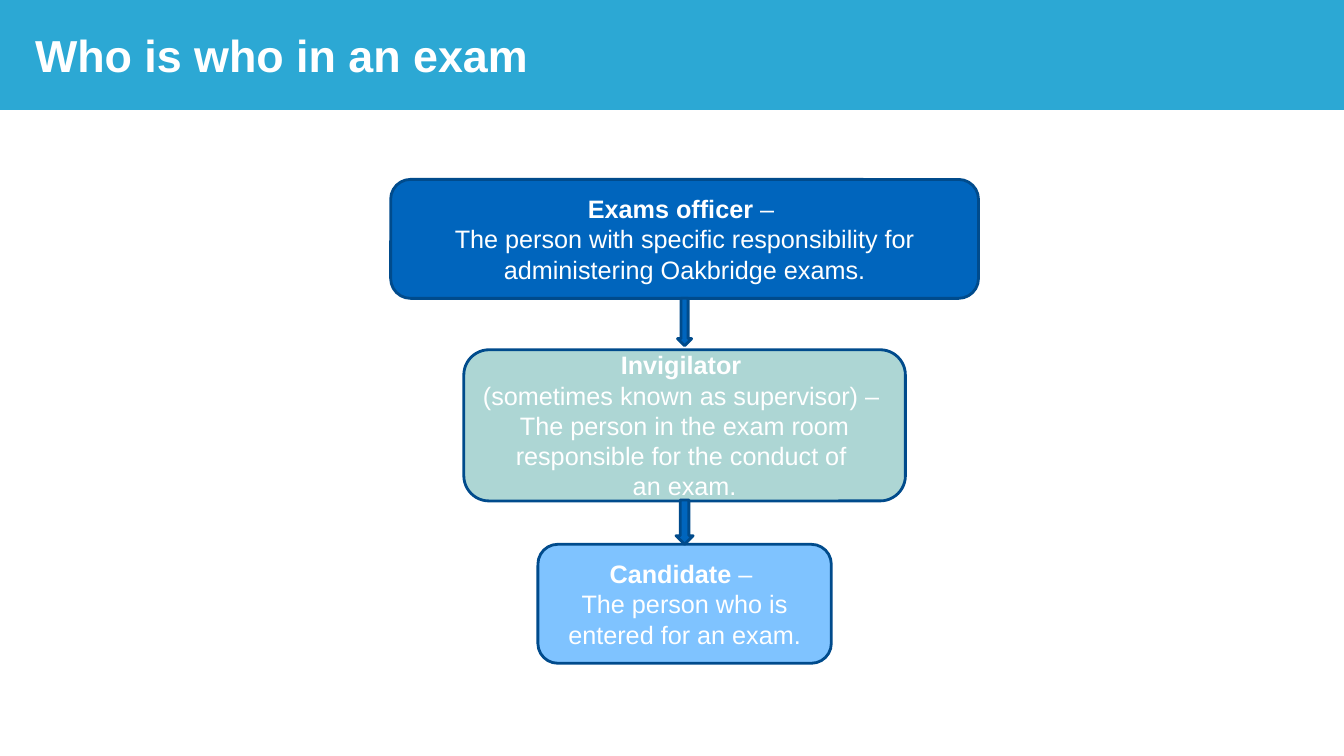
from dataclasses import dataclass

from pptx import Presentation
from pptx.dml.color import RGBColor
from pptx.enum.shapes import MSO_SHAPE
from pptx.enum.text import MSO_ANCHOR, PP_ALIGN
from pptx.util import Inches, Pt

RECT = MSO_SHAPE.RECTANGLE
ROUNDED = MSO_SHAPE.ROUNDED_RECTANGLE
DOWN_ARROW = MSO_SHAPE.DOWN_ARROW
MIDDLE = MSO_ANCHOR.MIDDLE
CENTER = PP_ALIGN.CENTER


@dataclass(frozen=True)
class Theme:
    font: str = "Arial"
    title_size: int = 32
    body_size: int = 18
    line_width: int = 2
    banner: str = "2CA8D4"
    white: str = "FFFFFF"
    outline: str = "004B8C"
    officer: str = "0065BD"
    invigilator: str = "ADD6D4"
    candidate: str = "7FC3FF"


@dataclass(frozen=True)
class Role:
    name: str
    suffix: str
    lines: tuple[str, ...]
    top: float
    width: float
    height: float
    fill: str


@dataclass(frozen=True)
class Arrow:
    top: float
    width: float
    height: float


THEME = Theme()
SLIDE_WIDTH = 13.33
CHART_CENTER = 6.79

ROLES = (
    Role("Exams officer ", "– ",
         ("The person with specific responsibility for administering Oakbridge exams.",),
         1.78, 5.83, 1.18, THEME.officer),
    Role("Invigilator ", "",
         ("(sometimes known as supervisor) – ",
          "The person in the exam room responsible for the conduct of ",
          "an exam."),
         3.47, 4.38, 1.5, THEME.invigilator),
    Role("Candidate", " – ",
         ("The person who is entered for an exam.",),
         5.4, 2.91, 1.18, THEME.candidate),
)
ARROWS = (Arrow(4.96, 0.17, 0.44), Arrow(2.96, 0.14, 0.47))


def set_font(font, size: int, bold: bool | None = None) -> None:
    font.name = THEME.font
    font.size = Pt(size)
    font.bold = bold
    font.color.rgb = RGBColor.from_string(THEME.white)


def add_block(slide, kind, left: float, top: float, width: float, height: float,
              fill: str, outlined: bool = True):
    sp = slide.shapes.add_shape(kind, Inches(left), Inches(top), Inches(width), Inches(height))
    sp.shadow.inherit = False
    sp.fill.solid()
    sp.fill.fore_color.rgb = RGBColor.from_string(fill)
    if outlined:
        sp.line.color.rgb = RGBColor.from_string(THEME.outline)
        sp.line.width = Pt(THEME.line_width)
    else:
        sp.line.fill.background()
    return sp


def add_title(slide, text: str) -> None:
    add_block(slide, RECT, 0, 0, SLIDE_WIDTH, 1.09, THEME.banner, outlined=False)
    box = slide.shapes.add_textbox(Inches(0.25), Inches(0.12), Inches(12.93), Inches(0.85))
    tf = box.text_frame
    tf.word_wrap = True
    tf.vertical_anchor = MIDDLE
    p = tf.paragraphs[0]
    p.text = text
    set_font(p.font, THEME.title_size, bold=True)


def add_role(slide, role: Role) -> None:
    sp = add_block(slide, ROUNDED, CHART_CENTER - role.width / 2, role.top,
                   role.width, role.height, role.fill)
    tf = sp.text_frame
    tf.word_wrap = True
    tf.vertical_anchor = MIDDLE
    heading = tf.paragraphs[0]
    r = heading.add_run()
    r.text = role.name
    r.font.bold = True
    if role.suffix:
        heading.add_run().text = role.suffix
    for line in role.lines:
        tf.add_paragraph().text = line
    for p in tf.paragraphs:
        p.alignment = CENTER
        set_font(p.font, THEME.body_size)


def add_arrow(slide, arrow: Arrow) -> None:
    add_block(slide, DOWN_ARROW, CHART_CENTER - arrow.width / 2, arrow.top,
              arrow.width, arrow.height, THEME.officer)


def main() -> None:
    prs = Presentation()
    prs.slide_width = Inches(SLIDE_WIDTH)
    prs.slide_height = Inches(7.5)
    slide = prs.slides.add_slide(prs.slide_layouts[6])
    add_title(slide, "Who is who in an exam")
    for role in ROLES:
        add_role(slide, role)
    for arrow in ARROWS:
        add_arrow(slide, arrow)
    prs.save("out.pptx")


if __name__ == "__main__":
    main()
